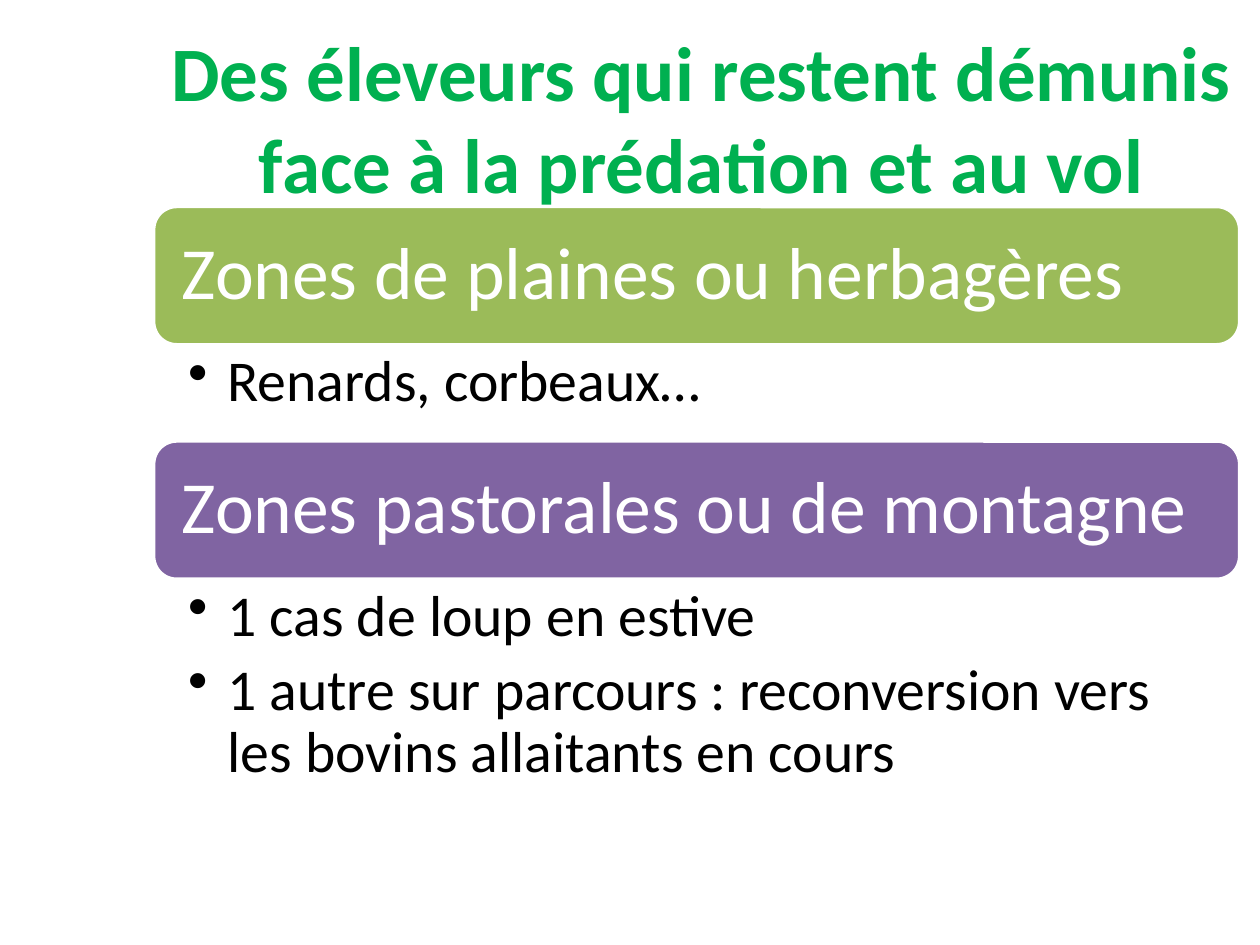
from lxml import etree
from pptx import Presentation
from pptx.dml.color import RGBColor
from pptx.enum.shapes import MSO_SHAPE
from pptx.enum.text import MSO_ANCHOR, PP_ALIGN
from pptx.oxml.ns import qn
from pptx.util import Pt

ROUND = MSO_SHAPE.ROUNDED_RECTANGLE
MIDDLE, TOP = MSO_ANCHOR.MIDDLE, MSO_ANCHOR.TOP
LEFT, CENTER = PP_ALIGN.LEFT, PP_ALIGN.CENTER

COLORS = {"title": "00B050", "plain": "9BBB59", "hill": "8064A2",
          "white": "FFFFFF", "black": "000000"}
X, WIDTH, BAR = 87.8, 620.6, 79
ZONES = [
    ("Zones de plaines ou herbagères", "plain", 118, 55,
     ["Renards, corbeaux…"]),
    ("Zones pastorales ou de montagne", "hill", 252, 127,
     ["1 cas de loup en estive",
      "1 autre sur parcours : reconversion vers les bovins allaitants en cours"]),
]


def color(name):
    """Return the named colour."""
    return RGBColor.from_string(COLORS[name])


def style(par, size, ink, bold=False, align=LEFT):
    """Set the font and alignment of a paragraph."""
    par.alignment = align
    par.font.name = "Calibri"
    par.font.size = Pt(size)
    par.font.bold = bold
    par.font.color.rgb = color(ink)


def set_frame(frame, anchor, left, top, right):
    """Set wrapping, anchor and insets of a text frame."""
    frame.word_wrap = True
    frame.vertical_anchor = anchor
    frame.margin_left, frame.margin_right = Pt(left), Pt(right)
    frame.margin_top = frame.margin_bottom = Pt(top)


def add_bullet(par):
    """Give a paragraph a hanging round bullet."""
    props = par._p.get_or_add_pPr()
    props.set("marL", str(Pt(22.5)))
    props.set("indent", str(-Pt(22.5)))
    etree.SubElement(props, qn("a:buChar")).set("char", "•")


def add_title(slide, text):
    """Add the slide title."""
    box = slide.shapes.add_textbox(Pt(82), Pt(21.6), Pt(638), Pt(90))
    set_frame(box.text_frame, MIDDLE, 7.2, 3.6, 7.2)
    par = box.text_frame.paragraphs[0]
    par.text = text
    style(par, 44, "title", True, CENTER)


def add_bar(slide, text, fill, top):
    """Add a rounded zone heading."""
    bar = slide.shapes.add_shape(ROUND, Pt(X), Pt(top), Pt(WIDTH), Pt(BAR))
    bar.shadow.inherit = False
    bar.fill.solid()
    bar.fill.fore_color.rgb = color(fill)
    bar.line.color.rgb = color("white")
    bar.line.width = Pt(2)
    set_frame(bar.text_frame, MIDDLE, 12.2, 12.2, 12.2)
    par = bar.text_frame.paragraphs[0]
    par.text = text
    par.line_spacing = 0.9
    style(par, 42, "white")


def add_list(slide, items, top, height):
    """Add the bullets under a zone heading."""
    box = slide.shapes.add_textbox(Pt(X), Pt(top), Pt(WIDTH), Pt(height))
    frame = box.text_frame
    set_frame(frame, TOP, 19.7, 4.2, 23.8)
    for num, item in enumerate(items):
        par = frame.add_paragraph() if num else frame.paragraphs[0]
        par.text = item
        add_bullet(par)
        par.line_spacing = 0.9
        par.space_after = Pt(6.6)
        style(par, 33, "black")


def main():
    """Build and save the slide."""
    deck = Presentation()
    deck.slide_width, deck.slide_height = Pt(720), Pt(540)
    slide = deck.slides.add_slide(deck.slide_layouts[6])
    add_title(slide, "Des éleveurs qui restent démunis face à la prédation et au vol")
    for text, fill, top, height, items in ZONES:
        add_bar(slide, text, fill, top)
        add_list(slide, items, top + BAR, height)
    deck.save("out.pptx")


if __name__ == "__main__":
    main()
